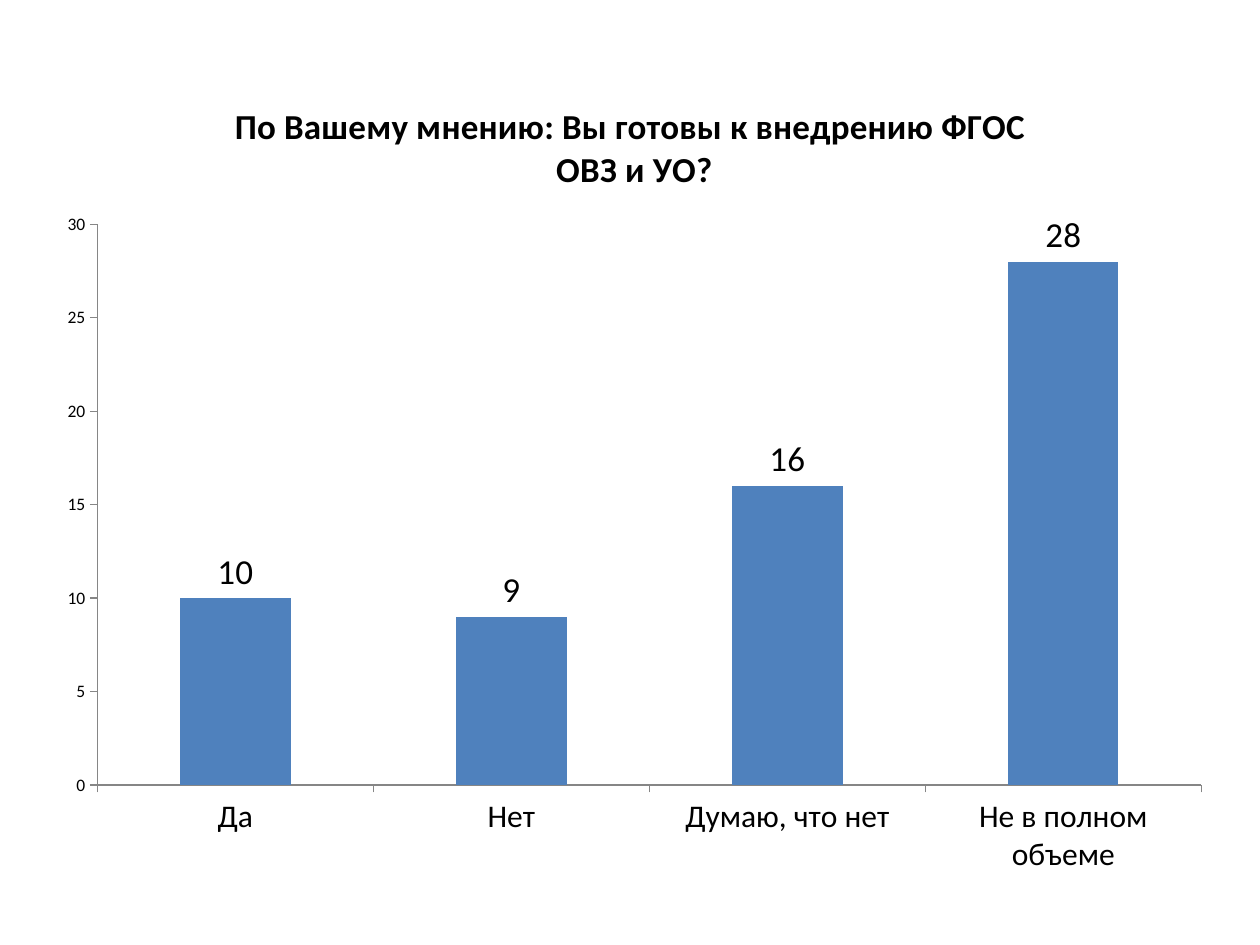
from dataclasses import dataclass

from pptx import Presentation
from pptx.chart.data import CategoryChartData
from pptx.dml.color import RGBColor
from pptx.enum.chart import XL_CHART_TYPE as ChartType
from pptx.enum.chart import XL_LABEL_POSITION as LabelPosition
from pptx.enum.chart import XL_TICK_MARK as TickMark
from pptx.util import Emu, Pt

EMU_PER_PX = 914400 / 126
SLIDE_SIZE = (1260, 945)
CHART_BOX = (44, 76, 1181, 814)
QUESTION = "По Вашему мнению: Вы готовы к внедрению ФГОС \nОВЗ и УО?"
ANSWERS = {"Да": 10, "Нет": 9, "Думаю, что нет": 16, "Не в полном объеме": 28}


@dataclass(frozen=True)
class Theme:
    """Colours and type sizes of the slide."""

    font: str = "Calibri"
    text: RGBColor = RGBColor(0x00, 0x00, 0x00)
    bar: RGBColor = RGBColor(0x4F, 0x81, 0xBD)
    axis: RGBColor = RGBColor(0x86, 0x86, 0x86)
    title_size: int = 20
    label_size: int = 20
    category_size: int = 18
    scale_size: int = 10


THEME = Theme()


def px(length):
    """Turn pixels into EMU."""
    return Emu(round(length * EMU_PER_PX))


def style_font(font, size, bold=False):
    """Apply the theme font at the given size."""
    font.name = THEME.font
    font.size = Pt(size)
    font.bold = bold
    font.color.rgb = THEME.text


def style_axis(axis, size):
    """Give an axis outward ticks, a grey line and no gridlines."""
    axis.has_major_gridlines = False
    axis.major_tick_mark = TickMark.OUTSIDE
    axis.minor_tick_mark = TickMark.NONE
    axis.format.line.color.rgb = THEME.axis
    axis.format.line.width = Pt(0.75)
    style_font(axis.tick_labels.font, size)


def add_chart_title(chart, text):
    """Write the survey question above the plot."""
    chart.has_title = True
    chart.chart_title.include_in_layout = False
    text_frame = chart.chart_title.text_frame
    text_frame.text = text
    for paragraph in text_frame.paragraphs:
        for run in paragraph.runs:
            style_font(run.font, THEME.title_size, bold=True)


def add_answer_chart(slide, box):
    """Draw the survey answers as columns inside the box."""
    chart_data = CategoryChartData()
    chart_data.categories = list(ANSWERS)
    chart_data.add_series("Series 1", list(ANSWERS.values()))
    chart = slide.shapes.add_chart(
        ChartType.COLUMN_CLUSTERED, *map(px, box), chart_data
    ).chart
    chart.has_legend = False
    style_font(chart.font, THEME.scale_size)
    add_chart_title(chart, QUESTION)

    style_axis(chart.category_axis, THEME.category_size)
    style_axis(chart.value_axis, THEME.scale_size)
    chart.value_axis.minimum_scale = 0
    chart.value_axis.maximum_scale = 30
    chart.value_axis.major_unit = 5

    plot = chart.plots[0]
    plot.vary_by_categories = False
    plot.gap_width = 150
    fill = plot.series[0].format.fill
    fill.solid()
    fill.fore_color.rgb = THEME.bar
    plot.has_data_labels = True
    labels = plot.data_labels
    labels.show_value = True
    labels.position = LabelPosition.OUTSIDE_END
    style_font(labels.font, THEME.label_size)


def main():
    """Build and save the presentation."""
    presentation = Presentation()
    presentation.slide_width, presentation.slide_height = map(px, SLIDE_SIZE)
    slide = presentation.slides.add_slide(presentation.slide_layouts[6])
    add_answer_chart(slide, CHART_BOX)
    presentation.save("out.pptx")


if __name__ == "__main__":
    main()
